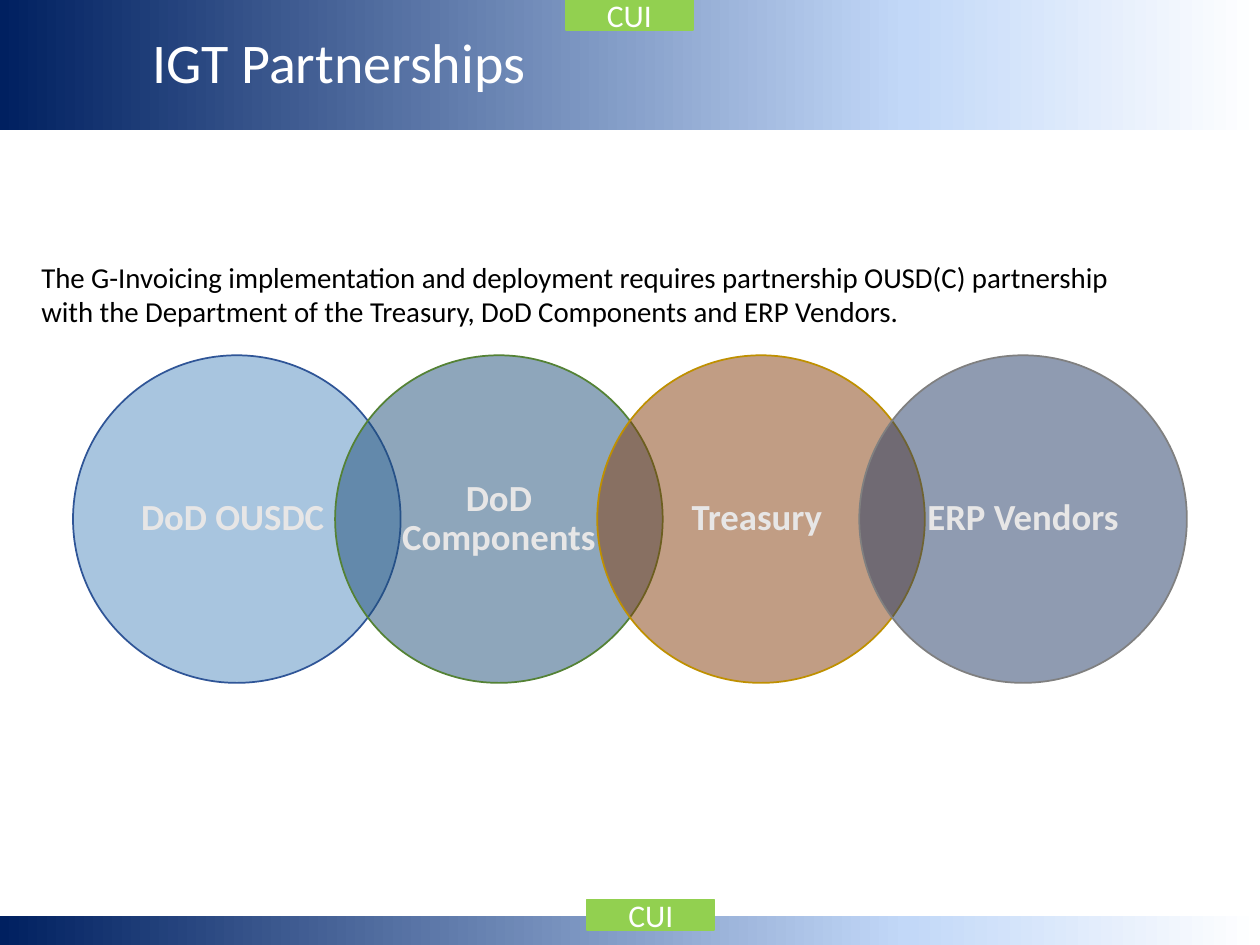
from lxml import etree
from pptx import Presentation
from pptx.dml.color import RGBColor
from pptx.enum import shapes, text
from pptx.oxml.ns import qn
from pptx.util import Inches, Pt

WHITE = RGBColor(0xFF, 0xFF, 0xFF)
BLACK = RGBColor(0, 0, 0)
PALE = RGBColor(0xE7, 0xE6, 0xE6)
GREEN = RGBColor(0x92, 0xD0, 0x50)
NAVY = RGBColor(0x00, 0x20, 0x60)
SKY = RGBColor(0xC2, 0xD8, 0xF8)

FADE = [(0, NAVY), (72, SKY), (100, WHITE)]
BANDS = [(0, 1.03), (7.27, 0.23)]  # top, height
MARKS = [(4.49, 0), (4.66, 7.14)]  # left, top
TITLE = "IGT Partnerships"
INTRO = ("The G-Invoicing implementation and deployment requires partnership "
         "OUSD(C) partnership with the Department of the Treasury, "
         "DoD Components and ERP Vendors.")
# The space at the end of a name shifts its centred text a little to the left.
PARTNERS = [
    ("DoD OUSDC ", RGBColor(0x53, 0x8D, 0xC1), RGBColor(0x2F, 0x55, 0x97)),
    ("DoD Components ", RGBColor(0x1F, 0x4E, 0x79), RGBColor(0x54, 0x82, 0x35)),
    ("Treasury ", RGBColor(0x84, 0x3C, 0x0B), RGBColor(0xBF, 0x90, 0x00)),
    ("ERP Vendors", RGBColor(0x20, 0x38, 0x64), RGBColor(0x80, 0x80, 0x80)),
]
LEFT, TOP, SIZE = 0.58, 2.82, 2.6
STEP = SIZE * 0.8  # neighbours overlap by a fifth


def add_form(parent, kind, box, fill=None, line=None):
    form = parent.add_shape(kind, *map(Inches, box))
    form.shadow.inherit = False
    if fill is not None:
        form.fill.solid()
        form.fill.fore_color.rgb = fill
    if line is None:
        form.line.fill.background()
    else:
        form.line.color.rgb = line
        form.line.width = Pt(1)
    return form


def write(shape, words, size, color, align=text.PP_ALIGN.LEFT,
          anchor=text.MSO_ANCHOR.MIDDLE, bold=False, spacing=None):
    frame = shape.text_frame
    frame.text = words
    frame.word_wrap = True
    frame.vertical_anchor = anchor
    para = frame.paragraphs[0]
    para.alignment = align
    para.line_spacing = spacing
    font = para.runs[0].font
    font.name, font.size, font.bold = "Calibri", Pt(size), bold
    font.color.rgb = color
    return frame


def fade(shape, stops):
    """Fill from left to right through (percent, colour) stops."""
    shape.fill.gradient()
    shape.fill.gradient_angle = 0
    items = next(shape.element.iter(qn("a:gsLst")))
    items.clear()
    for place, color in stops:
        stop = etree.SubElement(items, qn("a:gs"), pos=str(place * 1000))
        etree.SubElement(stop, qn("a:srgbClr"), val=str(color))


def set_alpha(shape, percent):
    color = shape.element.spPr.find(qn("a:solidFill"))[0]
    etree.SubElement(color, qn("a:alpha"), val=str(percent * 1000))


def main():
    deck = Presentation()
    deck.slide_width, deck.slide_height = Inches(10), Inches(7.5)
    slide = deck.slides.add_slide(deck.slide_layouts[6])
    rect, oval = shapes.MSO_SHAPE.RECTANGLE, shapes.MSO_SHAPE.OVAL
    center = text.PP_ALIGN.CENTER

    for top, height in BANDS:
        fade(add_form(slide.shapes, rect, (0, top, 10, height)), FADE)
    for left, top in MARKS:
        mark = add_form(slide.shapes, rect, (left, top, 1.01, 0.24), GREEN, GREEN)
        write(mark, "CUI", 18, WHITE, center)

    title = slide.shapes.add_textbox(*map(Inches, (1.11, 0.13, 7.82, 0.78)))
    write(title, TITLE, 32, WHITE, spacing=0.9)
    intro = slide.shapes.add_textbox(*map(Inches, (0.23, 2.01, 8.94, 0.66)))
    write(intro, INTRO, 16.5, BLACK, anchor=text.MSO_ANCHOR.TOP)

    chain = slide.shapes.add_group_shape().shapes
    for i, (name, fill, line) in enumerate(PARTNERS):
        box = (LEFT + i * STEP, TOP, SIZE, SIZE)
        circle = add_form(chain, oval, box, fill, line)
        set_alpha(circle, 50)
        frame = write(circle, name, 21, PALE, center, bold=True, spacing=0.9)
        frame.margin_left = frame.margin_right = Inches(0.14)
        frame.margin_top = frame.margin_bottom = Inches(0.03)

    deck.save("out.pptx")


if __name__ == "__main__":
    main()
